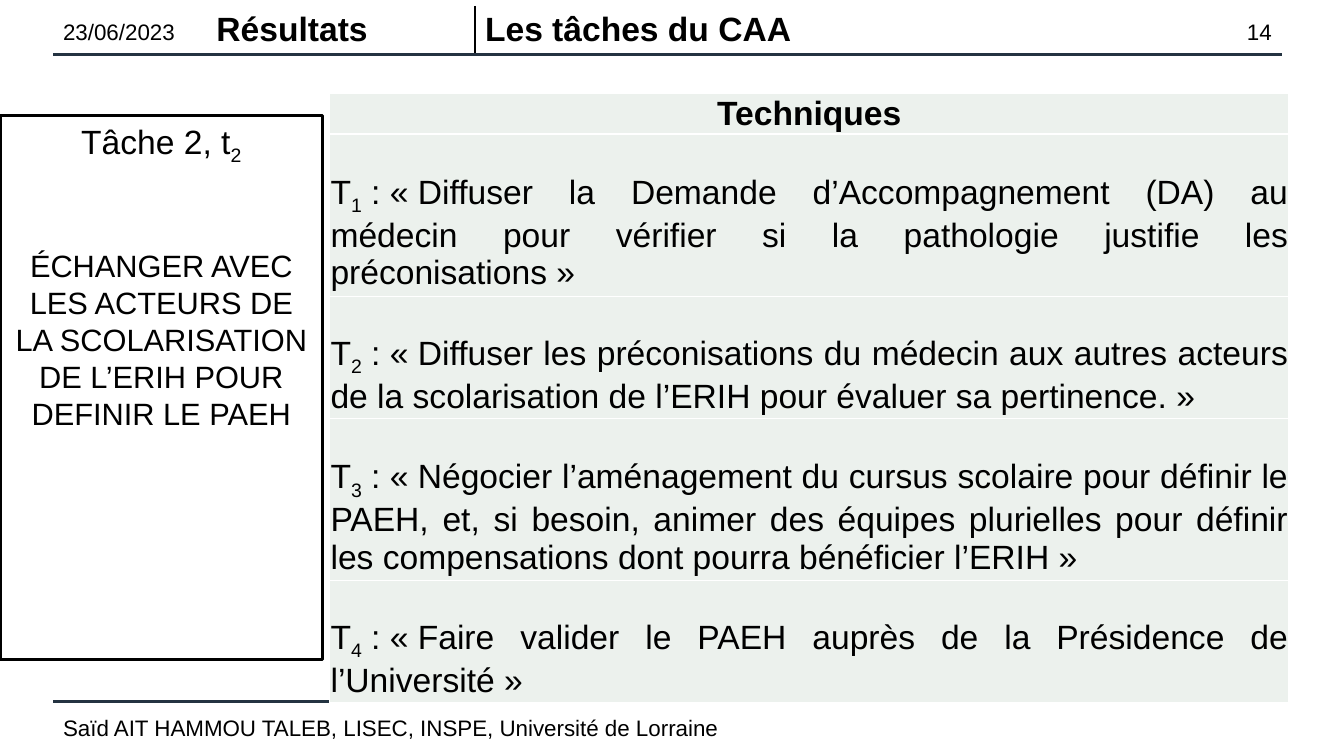
from lxml import etree
from pptx import Presentation
from pptx.dml.color import RGBColor
from pptx.enum.shapes import MSO_CONNECTOR, MSO_SHAPE
from pptx.enum.text import MSO_ANCHOR, PP_ALIGN
from pptx.oxml.ns import qn
from pptx.util import Cm, Pt

LEFT, MID, RIGHT, JUST = (PP_ALIGN.LEFT, PP_ALIGN.CENTER,
                          PP_ALIGN.RIGHT, PP_ALIGN.JUSTIFY)
TOP, CENTER = MSO_ANCHOR.TOP, MSO_ANCHOR.MIDDLE
LINE, RECT = MSO_CONNECTOR.STRAIGHT, MSO_SHAPE.RECTANGLE

BLACK, WHITE, NAVY, PALE = "000000", "FFFFFF", "243341", "ECF1ED"
PLAIN = "{2D5ABB26-0587-4C30-8999-92F81FD0307C}"  # table style without grid
NB = chr(160)  # no-break space

TECHS = [
    ("Diffuser la Demande d’Accompagnement (DA) au médecin pour vérifier "
     "si la pathologie justifie les préconisations", 3),
    ("Diffuser les préconisations du médecin aux autres acteurs de la "
     "scolarisation de l’ERIH pour évaluer sa pertinence.", 2),
    ("Négocier l’aménagement du cursus scolaire pour définir le PAEH, et, "
     "si besoin, animer des équipes plurielles pour définir les "
     "compensations dont pourra bénéficier l’ERIH", 3),
    ("Faire valider le PAEH auprès de la Présidence de l’Université", 2),
]


def color(code):
    return RGBColor.from_string(code)


def write(para, text, sub="", tail="", size=24, bold=False, align=LEFT,
          before=0):
    """Fill a paragraph with text, an optional subscript and a tail."""
    para.alignment = align
    para.space_before = Pt(before)
    for part, base in ((text, None), (sub, "-25000"), (tail, None)):
        if part:
            run = para.add_run()
            run.text = part
            font = run.font
            font.name, font.size, font.bold = "Arial", Pt(size), bold
            font.color.rgb = color(BLACK)
            if base:
                font._element.set("baseline", base)


def label(slide, box, text, **form):
    frame = slide.shapes.add_textbox(*map(Cm, box)).text_frame
    frame.word_wrap = True
    frame.vertical_anchor = CENTER
    write(frame.paragraphs[0], text, **form)


def rule(slide, left, top, width):
    line = slide.shapes.add_connector(
        LINE, Cm(left), Cm(top), Cm(left + width), Cm(top))
    line.line.color.rgb = color(NAVY)
    line.line.width = Pt(2.5)
    etree.SubElement(line._element.spPr, qn("a:effectLst"))


def grid(slide, box, cols, rows):
    table = slide.shapes.add_table(
        len(rows), len(cols), *map(Cm, box)).table
    table.first_row = table.horz_banding = False
    table._tbl.tblPr.find(qn("a:tableStyleId")).text = PLAIN
    for col, width in zip(table.columns, cols):
        col.width = Cm(width)
    for row, height in zip(table.rows, rows):
        row.height = Cm(height)
    return table


def border(cell, sides, code):
    props = cell._tc.get_or_add_tcPr()
    for spot, side in enumerate(sides):
        edge = etree.Element(qn("a:ln" + side), w=str(Pt(1)))
        fill = etree.SubElement(edge, qn("a:solidFill"))
        etree.SubElement(fill, qn("a:srgbClr"), val=code)
        props.insert(spot, edge)


def header(slide, left, top, width):
    # Date, page number and rule
    label(slide, (left, top, 4, 1.02), "23/06/2023", size=16)
    label(slide, (left + width - 1.78, top, 1.78, 1.02), "14",
          size=16, align=RIGHT)
    rule(slide, left, top + 1.09, width)
    # Section and title
    cols = (6.77, 19)
    table = grid(slide, (left + 3.86, top - 0.13, sum(cols), 1.17),
                 cols, [1.17])
    for cell, text, side in zip(table.rows[0].cells,
                                ("Résultats", "Les tâches du CAA"), "RL"):
        cell.margin_top, cell.margin_bottom = Cm(0.13), Cm(0.05)
        cell.vertical_anchor = TOP
        cell.fill.background()
        border(cell, side, BLACK)
        write(cell.text_frame.paragraphs[0], text, bold=True)


def footer(slide, left, top, width):
    rule(slide, left, top, width)
    label(slide, (left, top + 0.15, 29.18, 1.02),
          "Saïd AIT HAMMOU TALEB, LISEC, INSPE, Université de Lorraine",
          size=16)


def task(slide, box):
    shape = slide.shapes.add_shape(RECT, *map(Cm, box))
    shape.shadow.inherit = False
    shape.fill.background()
    shape.line.color.rgb = color(BLACK)
    shape.line.width = Pt(2.25)
    frame = shape.text_frame
    frame.word_wrap = True
    frame.vertical_anchor = TOP
    write(frame.paragraphs[0], "Tâche 2, t", sub="2", align=MID)
    write(frame.add_paragraph(),
          "ÉCHANGER AVEC LES ACTEURS DE LA SCOLARISATION DE L’ERIH "
          "POUR DEFINIR LE PAEH", size=22, align=MID, before=57.5)


def techniques(slide, left, top, width):
    # One line for the heading, then a lead gap and the lines of each text
    rows = [0.95] + [1.04 + 0.97 * count for _, count in TECHS]
    table = grid(slide, (left, top, width, sum(rows)), [width], rows)
    for num, row in enumerate(table.rows):
        cell = row.cells[0]
        cell.margin_left = cell.margin_right = Cm(0.02)
        cell.margin_top = Cm(0.9 if num else 0)
        cell.margin_bottom = 0
        cell.vertical_anchor = CENTER
        cell.fill.solid()
        cell.fill.fore_color.rgb = color(PALE)
        border(cell, "LRTB", WHITE)
        para = cell.text_frame.paragraphs[0]
        if num:
            text = TECHS[num - 1][0]
            write(para, "T", sub=str(num),
                  tail=f"{NB}:{NB}«{NB}{text}{NB}»", align=JUST)
        else:
            write(para, "Techniques", bold=True, align=MID)


def main():
    deck = Presentation()
    deck.slide_width, deck.slide_height = Cm(33.87), Cm(19.05)
    slide = deck.slides.add_slide(deck.slide_layouts[6])
    header(slide, 1.34, 0.28, 30.96)
    footer(slide, 1.34, 17.68, 30.96)
    task(slide, (0, 2.92, 8.13, 13.69))
    techniques(slide, 8.31, 2.36, 24.17)
    deck.save("out.pptx")


if __name__ == "__main__":
    main()
